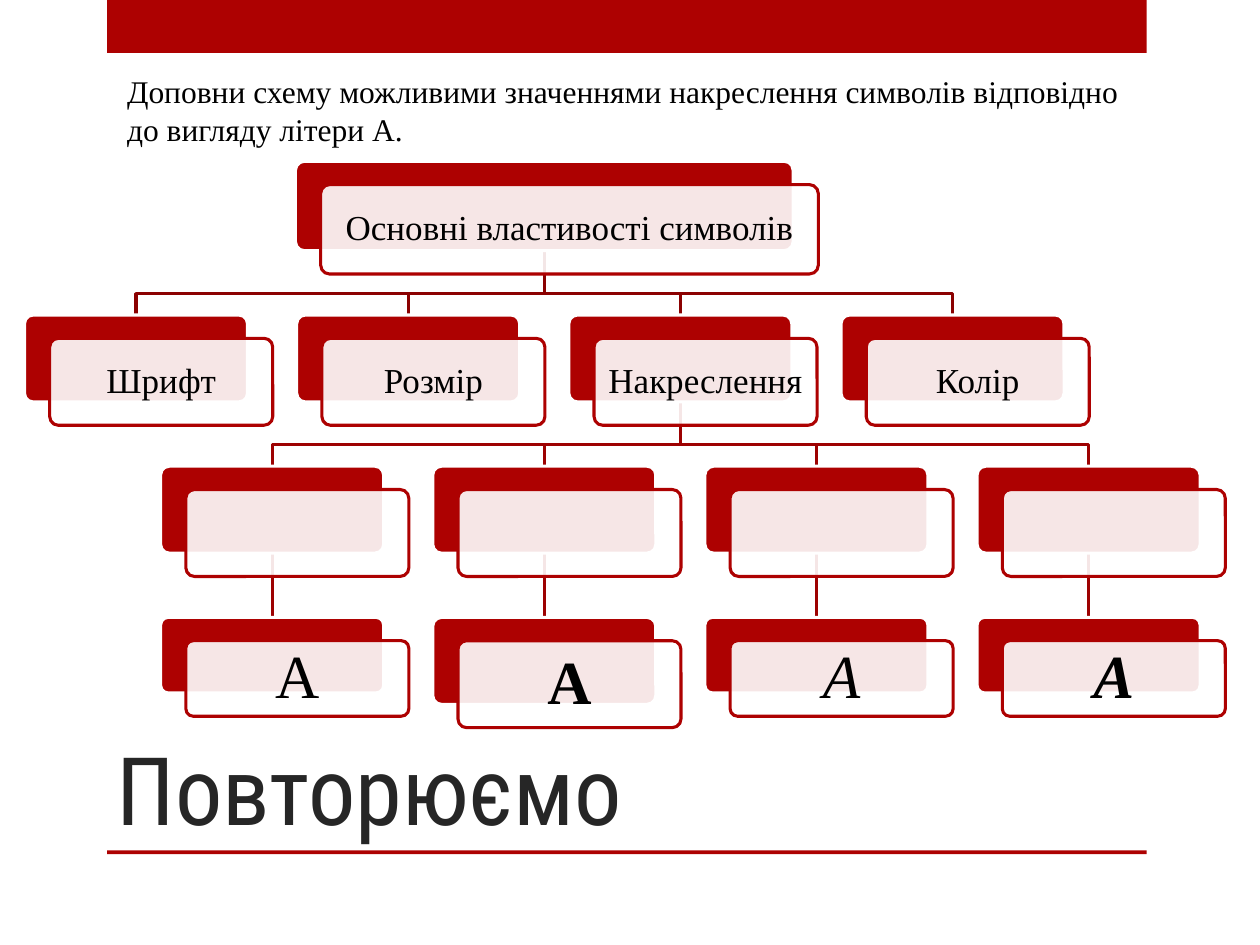
from lxml.etree import SubElement
from pptx import Presentation
from pptx.dml.color import RGBColor
from pptx.enum.shapes import MSO_CONNECTOR, MSO_SHAPE
from pptx.enum.text import MSO_ANCHOR, PP_ALIGN
from pptx.oxml.ns import qn
from pptx.util import Inches, Pt

WIDE, HIGH = 10, 7.5
COL = 1.08                      # half the pitch of the cards
ROWS = (1.28, 2.5, 3.7, 4.9)    # tops of the four levels
CARD, SHIFT, TALL = 1.77, (0.2, 0.185), 0.69
RED, DARK, DEEP = "AD0101", "8B0101", "9D0101"
SERIF = "Times New Roman"
KINDS = ("Шрифт", "Розмір", "Накреслення", "Колір")
LEAVES = (  # height, font format
    (0.6, {}),
    (0.69, {"bold": True}),
    (0.6, {"italic": True}),
    (0.6, {"bold": True, "italic": True}),
)


def rgb(code):
    return RGBColor.from_string(code)


def apply(item, form):
    for name, value in form.items():
        setattr(item, name, value)


def write(frame, text, size, face=SERIF, color="000000", inset=None,
          para=None, **form):
    frame.word_wrap = True
    if inset is not None:
        sides = ("left", "top", "right", "bottom")
        apply(frame, {f"margin_{side}": Inches(inset) for side in sides})
    line = frame.paragraphs[0]
    apply(line, para or {})
    run = line.add_run()
    run.text = text
    apply(run.font, {"name": face, "size": Pt(size), **form})
    run.font.color.rgb = rgb(color)


def block(slide, kind, box, fill, edge=None):
    shape = slide.shapes.add_shape(kind, *map(Inches, box))
    shape.shadow.inherit = False
    shape.fill.solid()
    shape.fill.fore_color.rgb = rgb(fill)
    if edge:
        shape.line.color.rgb = rgb(edge)
        shape.line.width = Pt(1.75)
        shape.adjustments[0] = 0.1
    else:
        shape.line.fill.background()
    return shape


def label(slide, box, text, size, anchor, **form):
    shape = slide.shapes.add_textbox(*map(Inches, box))
    shape.text_frame.vertical_anchor = anchor
    write(shape.text_frame, text, size, **form)


def card(slide, box, text="", size=20, **form):
    """Draw a red plate with a clear plate over it; return the red one."""
    left, top, wide, tall = box
    back = block(slide, MSO_SHAPE.ROUNDED_RECTANGLE, box, RED, "FFFFFF")
    over = (left + SHIFT[0], top + SHIFT[1], wide, tall)
    front = block(slide, MSO_SHAPE.ROUNDED_RECTANGLE, over, "FFFFFF", RED)
    tint = front.fill._xPr.find(qn("a:solidFill"))[0]
    SubElement(tint, qn("a:alpha"), val="90000")
    if text:
        front.text_frame.vertical_anchor = MSO_ANCHOR.MIDDLE
        para = {"alignment": PP_ALIGN.CENTER, "line_spacing": 0.9}
        write(front.text_frame, text, size, inset=0.09, para=para, **form)
    return back


def sink(slide, shape, color):
    """Style a link and send it behind the cards."""
    shape.line.color.rgb = rgb(color)
    shape.line.width = Pt(1.75)
    slide.shapes._spTree.insert(2, shape._element)


def drop(slide, top, low):
    link = slide.shapes.add_connector(MSO_CONNECTOR.STRAIGHT, 0, 0, 0, 0)
    link.begin_connect(top, 2)
    link.end_connect(low, 0)
    SubElement(link._element.spPr, qn("a:effectLst"))
    sink(slide, link, DEEP)


def elbow(slide, top, low, color):
    x, y = top.left + top.width // 2, top.top + top.height
    end = low.left + low.width // 2
    bend = low.top - Inches(0.17)
    path = slide.shapes.build_freeform(x, y, scale=1.0)
    path.add_line_segments([(x, bend), (end, bend), (end, low.top)],
                           close=False)
    link = path.convert_to_shape()
    link.shadow.inherit = False
    link.fill.background()
    sink(slide, link, color)


def place(row, step, wide=CARD, tall=TALL):
    """Box of a card centred on a grid step."""
    return step * COL - wide / 2, ROWS[row], wide, tall


def tree(slide):
    root = card(slide, place(0, 4, 3.95, 0.71), "Основні властивості символів")
    kinds = [card(slide, place(1, 2 * i + 1), text)
             for i, text in enumerate(KINDS)]
    for kind in kinds:
        elbow(slide, root, kind, DARK)
    for i, (tall, form) in enumerate(LEAVES):
        step = 2 * i + 2
        blank = card(slide, place(2, step))
        leaf = card(slide, place(3, step, tall=tall), "А", 35, **form)
        elbow(slide, kinds[2], blank, DEEP)
        drop(slide, blank, leaf)


def frame(slide):
    left, wide = 0.085 * WIDE, 0.825 * WIDE
    for top, tall in ((0, 0.42), (0.9 * HIGH, 0.03)):
        block(slide, MSO_SHAPE.RECTANGLE, (left, top, wide, tall), RED)


def main():
    deck = Presentation()
    deck.slide_width, deck.slide_height = Inches(WIDE), Inches(HIGH)
    slide = deck.slides.add_slide(deck.slide_layouts[6])
    tree(slide)
    frame(slide)
    label(slide, (0.83, 5, 7.42, 1.75), "Повторюємо", 54, MSO_ANCHOR.BOTTOM,
          face="Roboto Condensed", color="262626")
    label(slide, (0.91, 0.52, 8.11, 0.71),
          "Доповни схему можливими значеннями накреслення символів "
          "відповідно до вигляду літери А.", 18, MSO_ANCHOR.TOP)
    deck.save("out.pptx")


if __name__ == "__main__":
    main()
